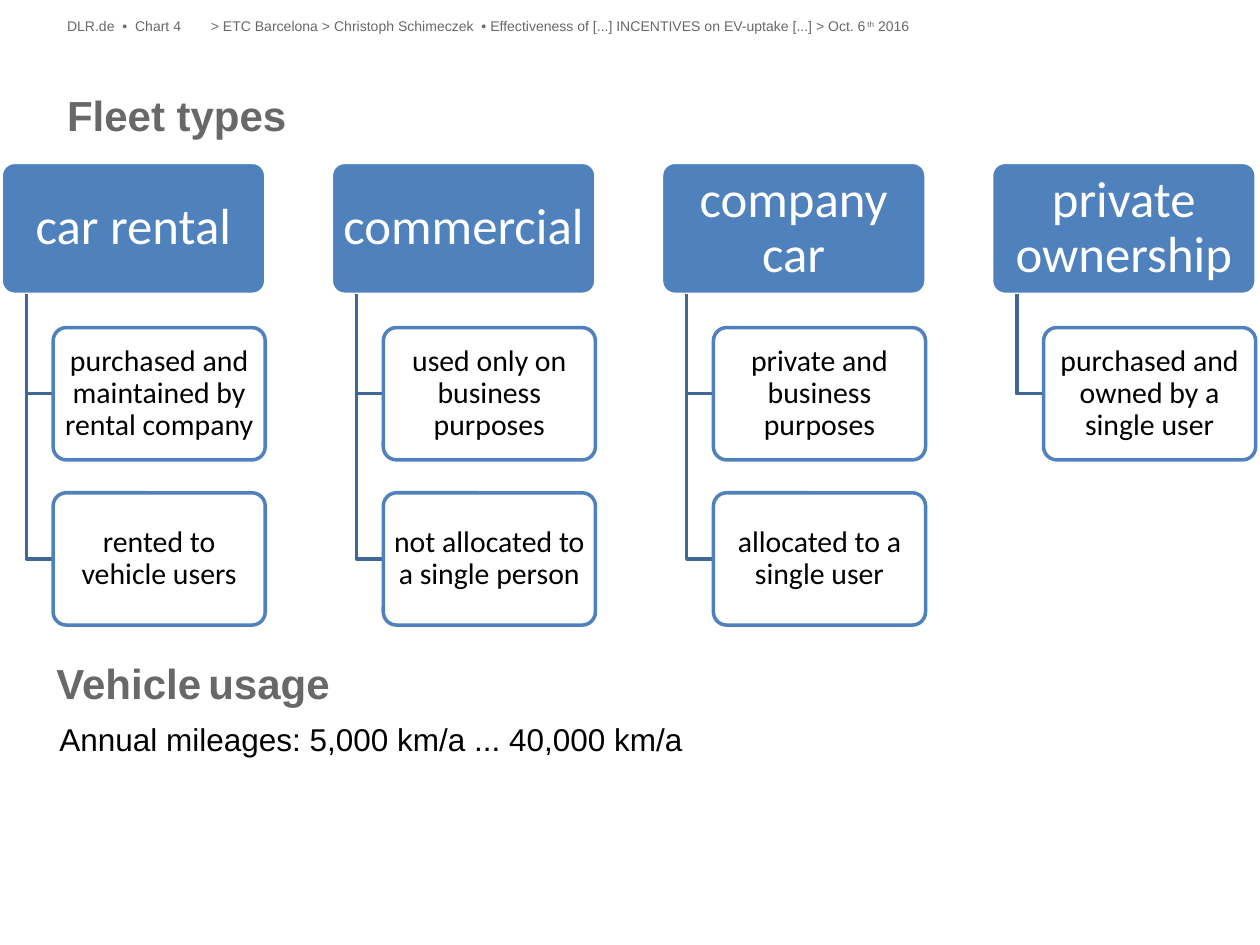
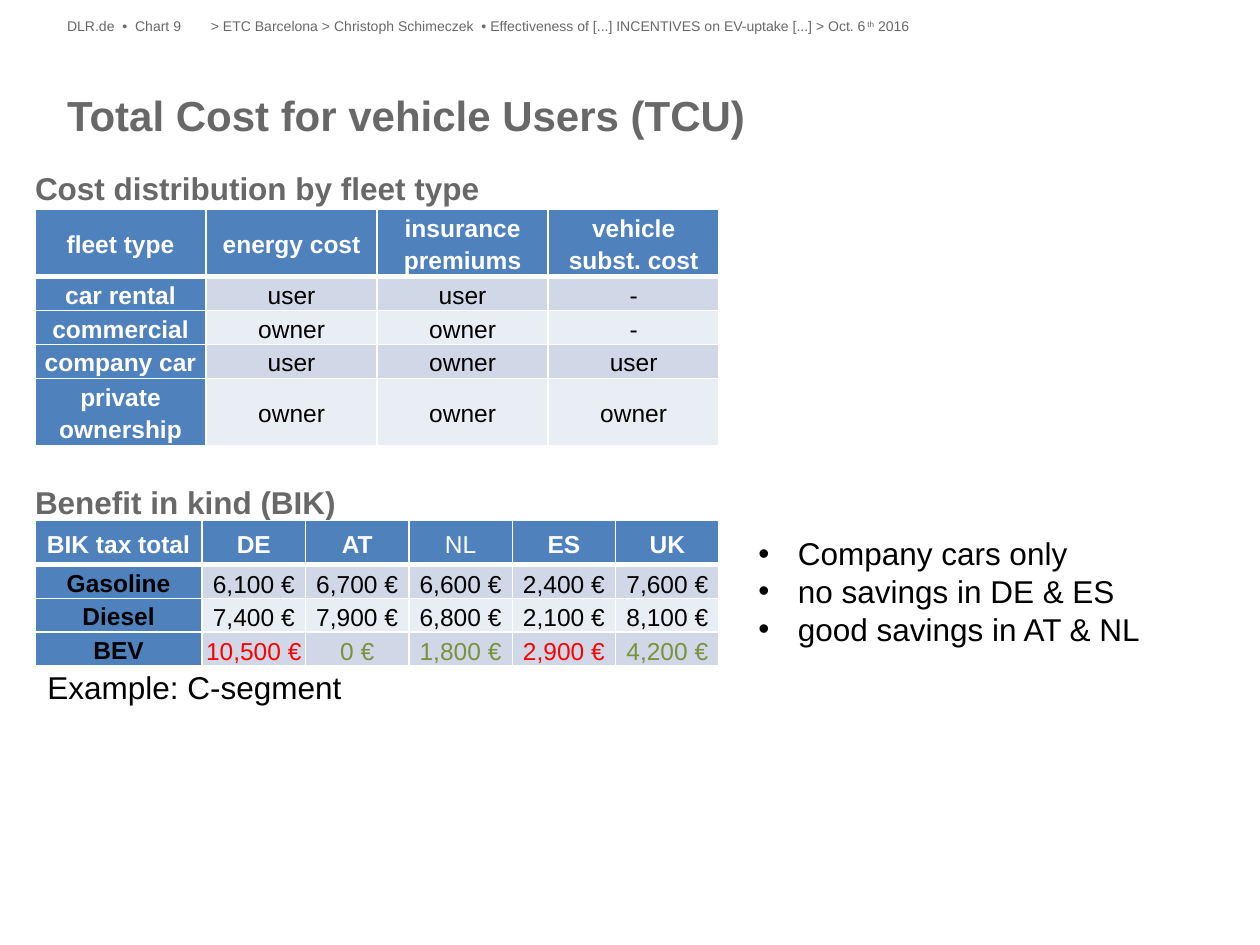
from dataclasses import dataclass

from lxml import etree
from pptx import Presentation
from pptx.dml.color import RGBColor
from pptx.enum.shapes import MSO_SHAPE
from pptx.enum.text import MSO_ANCHOR, MSO_AUTO_SIZE, PP_ALIGN
from pptx.oxml.ns import qn
from pptx.util import Pt

ROUNDED = MSO_SHAPE.ROUNDED_RECTANGLE
TOP, MIDDLE, BOTTOM = MSO_ANCHOR.TOP, MSO_ANCHOR.MIDDLE, MSO_ANCHOR.BOTTOM
LEFT, CENTER = PP_ALIGN.LEFT, PP_ALIGN.CENTER
NO_AUTOFIT = MSO_AUTO_SIZE.NONE

GREY = RGBColor(0x68, 0x68, 0x68)
BLACK = RGBColor(0, 0, 0)
WHITE = RGBColor(0xFF, 0xFF, 0xFF)
BLUE = RGBColor(0x4F, 0x81, 0xBD)
DARK_BLUE = RGBColor(0x3F, 0x67, 0x97)
BAND_DARK = RGBColor(0xD0, 0xD8, 0xE8)
BAND_LIGHT = RGBColor(0xE9, 0xED, 0xF4)
RED = RGBColor(0xFF, 0, 0)
GREEN = RGBColor(0x77, 0x93, 0x3C)

ARIAL, CALIBRI = "Arial", "Calibri"


@dataclass(frozen=True)
class Box:
    left: float
    top: float
    width: float
    height: float

    def emu(self) -> tuple:
        return Pt(self.left), Pt(self.top), Pt(self.width), Pt(self.height)


@dataclass(frozen=True)
class Run:
    text: str
    size: float = 18
    color: RGBColor = BLACK
    bold: bool = False
    font: str = ARIAL
    baseline: int = 0


@dataclass(frozen=True)
class Fleet:
    name: str
    traits: tuple


@dataclass(frozen=True)
class Cell:
    text: str
    color: RGBColor = BLACK
    bold: bool = False
    tight: bool = False


FLEETS = (
    Fleet("car rental", ("purchased and maintained by rental company",
                         "rented to vehicle users")),
    Fleet("commercial", ("used only on business purposes",
                         "not allocated to a single person")),
    Fleet("company car", ("private and business purposes",
                          "allocated to a single user")),
    Fleet("private ownership", ("purchased and owned by a single user",)),
)
FLEET_PITCH, TRAIT_PITCH = 188.65, 94.4
FLEET_HEAD = Box(0.7, 92.8, 151.2, 75.4)
TRAIT_BOX = Box(30.4, 187.2, 121.2, 75.6)
STEM_OFFSET = 15.1

COST_HEAD = ("fleet type", "energy cost", "insurance premiums", "vehicle subst. cost")
COST_ROWS = (
    ("car rental", "user", "user", "-"),
    ("commercial", "owner", "owner", "-"),
    ("company car", "user", "owner", "user"),
    ("private ownership", "owner", "owner", "owner"),
)
COUNTRIES = ("DE", "AT", "NL", "ES", "UK")
BIK_TAX = {
    "Gasoline": (6100, 6700, 6600, 2400, 7600),
    "Diesel": (7400, 7900, 6800, 2100, 8100),
    "BEV": (10500, 0, 1800, 2900, 4200),
}


def add_run(p, run: Run) -> None:
    r = p.add_run()
    r.text = run.text
    f = r.font
    f.name, f.size, f.bold = run.font, Pt(run.size), run.bold
    f.color.rgb = run.color
    if run.baseline:
        f._element.set("baseline", str(run.baseline * 1000))


def set_margins(target, x: float, y: float) -> None:
    target.margin_left = target.margin_right = Pt(x)
    target.margin_top = target.margin_bottom = Pt(y)


def add_text(s, box: Box, *runs: Run, inset: bool = False, align=LEFT):
    tf = s.shapes.add_textbox(*box.emu()).text_frame
    tf.word_wrap = not inset
    set_margins(tf, *((7.2, 3.6) if inset else (0, 0)))
    tf.paragraphs[0].alignment = align
    for run in runs:
        add_run(tf.paragraphs[0], run)
    return tf


def add_slide(prs, title: str, number: int):
    s = prs.slides.add_slide(prs.slide_layouts[5])
    sp = s.shapes.title
    sp.left, sp.top, sp.width, sp.height = Box(38.3, 51, 643.5, 58.5).emu()
    tf = sp.text_frame
    tf.auto_size, tf.vertical_anchor, tf.word_wrap = NO_AUTOFIT, TOP, True
    set_margins(tf, 0, 0)
    tf.paragraphs[0].alignment = LEFT
    add_run(tf.paragraphs[0], Run(title, 24, GREY, True))
    add_text(s, Box(120.5, 10, 561.5, 11.5),
             Run("> ETC Barcelona > Christoph Schimeczek  • Effectiveness of [...] "
                 "INCENTIVES on EV-uptake [...] > Oct. 6", 8, GREY),
             Run("th", 8, GREY, baseline=30),
             Run(" 2016", 8, GREY))
    add_text(s, Box(38.3, 10, 82, 11.5), Run(f"DLR.de  •  Chart {number}", 8, GREY))
    return s


def add_card(s, box: Box, run: Run, fill: RGBColor, line: RGBColor,
             margin: float, opacity: int = 100) -> None:
    sp = s.shapes.add_shape(ROUNDED, *box.emu())
    sp.shadow.inherit = False
    sp.adjustments[0] = 0.1
    sp.fill.solid()
    sp.fill.fore_color.rgb = fill
    if opacity < 100:
        color = sp._element.spPr.find(qn("a:solidFill"))[0]
        etree.SubElement(color, qn("a:alpha"), val=str(opacity * 1000))
    sp.line.color.rgb = line
    sp.line.width = Pt(2)
    tf = sp.text_frame
    tf.word_wrap, tf.vertical_anchor = True, MIDDLE
    set_margins(tf, margin, margin / 2)
    p = tf.paragraphs[0]
    p.alignment, p.line_spacing = CENTER, 0.9
    add_run(p, run)


def add_elbow(s, x: float, top: float, end_x: float, end_y: float) -> None:
    path = s.shapes.build_freeform(Pt(x), Pt(top))
    path.add_line_segments([(Pt(x), Pt(end_y)), (Pt(end_x), Pt(end_y))], close=False)
    sp = path.convert_to_shape()
    sp.shadow.inherit = False
    sp.fill.background()
    sp.line.color.rgb = DARK_BLUE
    sp.line.width = Pt(2)


def add_fleet(s, fleet: Fleet, column: int) -> None:
    left = FLEET_HEAD.left + column * FLEET_PITCH
    head = Box(left, FLEET_HEAD.top, FLEET_HEAD.width, FLEET_HEAD.height)
    add_card(s, head, Run(fleet.name, 29, WHITE, font=CALIBRI), BLUE, WHITE, 4)
    for i, trait in enumerate(fleet.traits):
        box = Box(left + TRAIT_BOX.left - 0.7, TRAIT_BOX.top + i * TRAIT_PITCH,
                  TRAIT_BOX.width, TRAIT_BOX.height)
        add_elbow(s, left + STEM_OFFSET - 0.7, head.top + head.height,
                  box.left, box.top + box.height / 2)
        add_card(s, box, Run(trait, 17, font=CALIBRI), WHITE, BLUE, 2.8, 90)


def set_borders(cell, bottom: float) -> None:
    tc_pr = cell._tc.get_or_add_tcPr()
    for side, width in (("L", 1), ("R", 1), ("T", 1), ("B", bottom)):
        ln = etree.SubElement(tc_pr, qn(f"a:ln{side}"), w=str(Pt(width)))
        fill = etree.SubElement(ln, qn("a:solidFill"))
        etree.SubElement(fill, qn("a:srgbClr"), val=str(WHITE))


def cell_fill(row: int, column: int) -> RGBColor:
    if row == 0 or column == 0:
        return BLUE
    return BAND_DARK if row % 2 else BAND_LIGHT


def add_grid(s, box: Box, widths: list, heights: list, rows: list) -> None:
    frame = s.shapes.add_table(len(rows), len(widths), *box.emu())
    table = frame.table
    for column, width in zip(table.columns, widths):
        column.width = Pt(width)
    for row, height in zip(table.rows, heights):
        row.height = Pt(height)
    frame.height = Pt(box.height)
    for i, row in enumerate(rows):
        for j, item in enumerate(row):
            cell = table.cell(i, j)
            set_borders(cell, 1 if i else 3)
            cell.fill.solid()
            cell.fill.fore_color.rgb = cell_fill(i, j)
            cell.vertical_anchor = BOTTOM if item.tight else MIDDLE
            set_margins(cell, 0 if item.tight else 5, 0)
            p = cell.text_frame.paragraphs[0]
            p.alignment = CENTER
            p.line_spacing = 1.0 if item.tight else 1.15
            add_run(p, Run(item.text, 14, item.color, item.bold))


def add_bullets(s, box: Box, lines: tuple) -> None:
    tf = add_text(s, box)
    for i, line in enumerate(lines):
        p = tf.add_paragraph() if i else tf.paragraphs[0]
        p_pr = p._p.get_or_add_pPr()
        p_pr.set("marL", str(Pt(22.5)))
        p_pr.set("indent", str(-Pt(22.5)))
        etree.SubElement(p_pr, qn("a:buFont"), typeface=ARIAL)
        etree.SubElement(p_pr, qn("a:buChar"), char="•")
        add_run(p, Run(line))


def bik_color(fuel: str, column: int) -> RGBColor:
    if fuel != "BEV":
        return BLACK
    return RED if BIK_TAX["BEV"][column] > BIK_TAX["Gasoline"][column] else GREEN


def build_fleet_types(prs) -> None:
    s = add_slide(prs, "Fleet types", 4)
    add_text(s, Box(25.2, 408.2, 373.7, 28.8),
             Run("Annual mileages: 5,000 km/a ... 40,000 km/a"), inset=True, align=CENTER)
    for column, fleet in enumerate(FLEETS):
        add_fleet(s, fleet, column)
    add_text(s, Box(25.2, 372.2, 172, 36), Run("Vehicle", 24, GREY, True),
             Run(" ", font=CALIBRI), Run("usage", 24, GREY, True), inset=True)


def build_total_cost(prs) -> None:
    s = add_slide(prs, "Total Cost for vehicle Users (TCU)", 9)
    cost = [[Cell(t, WHITE, True) for t in COST_HEAD]]
    cost += [[Cell(name, WHITE, True), *map(Cell, payers)] for name, *payers in COST_ROWS]
    add_grid(s, Box(20, 119.5, 391, 135.4), [97.75] * 4, [28.8] + [14.8] * 4, cost)
    for top, heading in ((96.5, "Cost distribution by fleet type"),
                         (275.8, "Benefit in kind (BIK)")):
        add_text(s, Box(20, top, 294.5, 21.6), Run(heading, 18, GREY, True))
    bik = [[Cell(t, WHITE, t != "NL") for t in ("BIK tax total", *COUNTRIES)]]
    for fuel, taxes in BIK_TAX.items():
        bik.append([Cell(fuel, bold=True)] + [
            Cell(f"{tax:,} €", bik_color(fuel, j), tight=True)
            for j, tax in enumerate(taxes)])
    add_grid(s, Box(20, 297.4, 391, 82.8), [95.5] + [59.1] * 5, [25.2] + [16.6] * 3, bik)
    add_bullets(s, Box(433.4, 305.3, 238.3, 65.5),
                ("Company cars only", "no savings in DE & ES", "good savings in AT & NL"))
    add_text(s, Box(20, 378, 184.3, 28.8), Run("Example: C-segment"), inset=True)


def main() -> None:
    prs = Presentation()
    prs.slide_width, prs.slide_height = Pt(720), Pt(540)
    build_fleet_types(prs)
    build_total_cost(prs)
    prs.save("out.pptx")


if __name__ == "__main__":
    main()
